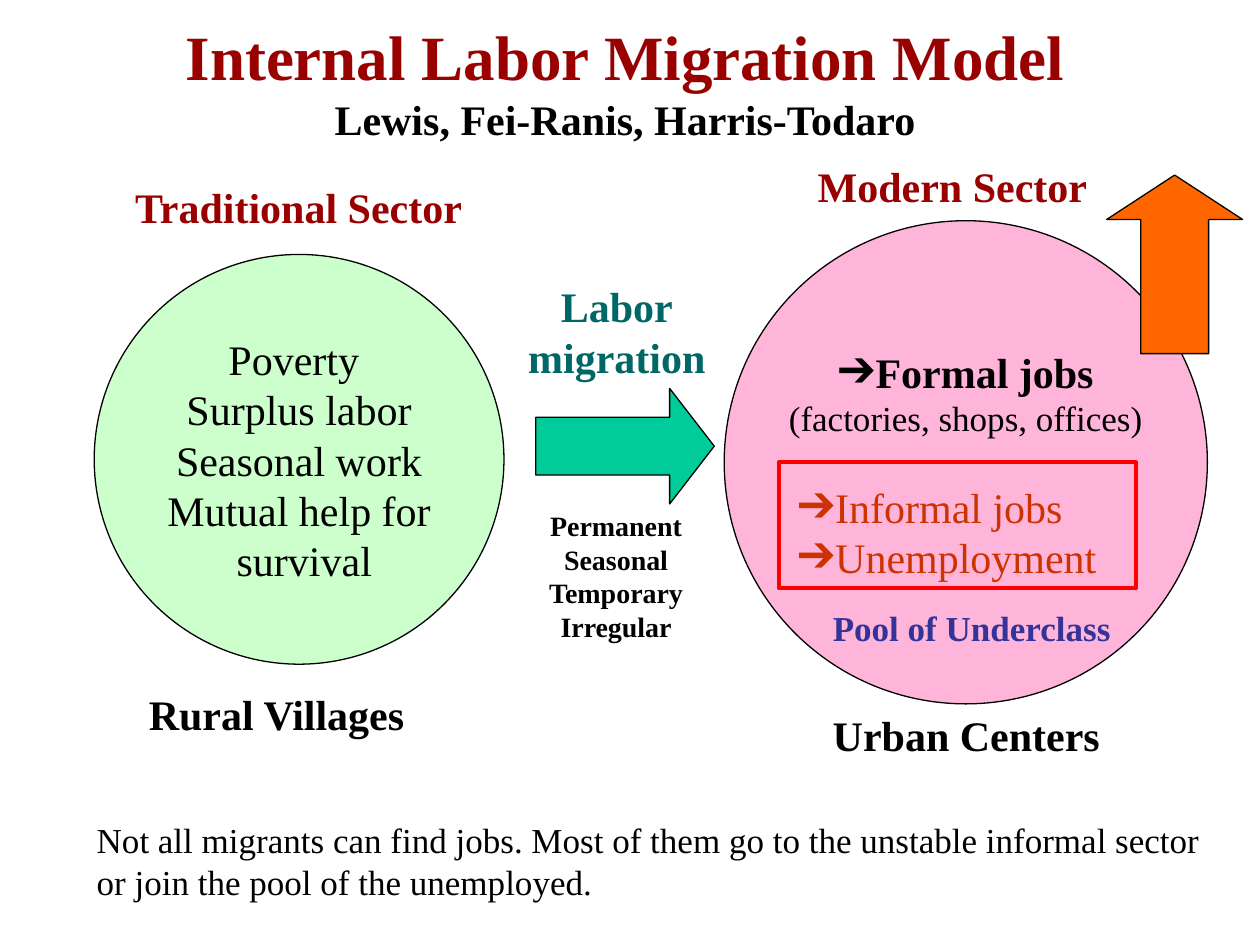
"""Build the internal labor migration model slide."""
from dataclasses import dataclass

from lxml import etree
from pptx import Presentation
from pptx.dml.color import RGBColor
from pptx.enum import shapes, text
from pptx.oxml import ns
from pptx.util import Cm, Pt


@dataclass(frozen=True)
class Theme:
    font: str = "Times New Roman"
    black: str = "000000"
    dark_red: str = "990000"
    teal: str = "006666"
    rust: str = "CC3300"
    indigo: str = "333399"
    red: str = "FF0000"
    light_green: str = "CCFFCC"
    pink: str = "FFB5DA"
    green: str = "00CC99"
    orange: str = "FF6600"
    title: int = 36
    heading: int = 24
    body: int = 20
    small: int = 16


THEME = Theme()
SHAPE = shapes.MSO_SHAPE
ALIGN = text.PP_ALIGN


@dataclass(frozen=True)
class Box:
    left: float
    top: float
    width: float
    height: float

    def lengths(self) -> tuple:
        return Cm(self.left), Cm(self.top), Cm(self.width), Cm(self.height)


@dataclass(frozen=True)
class Label:
    wording: str
    box: Box
    size: int = THEME.heading
    color: str = THEME.black
    bold: bool = True
    align: ALIGN = ALIGN.CENTER


@dataclass(frozen=True)
class Figure:
    kind: SHAPE
    box: Box
    fill: str | None
    line: str = THEME.black
    weight: float = 0.75
    head: float | None = None


VILLAGES = Figure(SHAPE.OVAL, Box(1.9, 5.13, 8.26, 8.26), THEME.light_green)
CITIES = Figure(SHAPE.OVAL, Box(14.6, 4.45, 9.74, 9.74), THEME.pink)
MIGRATION = Figure(SHAPE.RIGHT_ARROW, Box(10.8, 7.83, 3.6, 2.33), THEME.green, head=0.386)
GROWTH = Figure(SHAPE.UP_ARROW, Box(22.31, 3.53, 2.74, 3.6), THEME.orange, head=0.327)
UNDERCLASS = Figure(SHAPE.RECTANGLE, Box(15.7, 9.32, 7.2, 2.54), None, THEME.red, 2.25)

LABELS = (
    Label("Rural Villages", Box(2.75, 13.76, 5.93, 1.27), align=ALIGN.LEFT),
    Label("Urban Centers", Box(15.88, 14.18, 7.2, 1.27)),
    Label("Labor\nmigration", Box(10.32, 5.54, 4.23, 2.28), color=THEME.teal),
    Label("Not all migrants can find jobs. Most of them go to the unstable informal "
          "sector or join the pool of the unemployed.",
          Box(1.7, 16.38, 23.07, 1.96), THEME.body, bold=False, align=ALIGN.LEFT),
    Label("Pool of Underclass", Box(16.1, 12.11, 6.98, 1.09), THEME.body, THEME.indigo),
    Label("Traditional Sector", Box(2.12, 3.53, 7.8, 1.27), color=THEME.dark_red),
    Label("Modern Sector", Box(15.3, 3.12, 7.8, 1.27), color=THEME.dark_red),
    Label("Permanent\nSeasonal\nTemporary\nIrregular", Box(10.32, 10.13, 4.2, 2.97), THEME.small),
)


def write(paragraph, wording: str, *, size: int = THEME.heading, color: str = THEME.black,
          bold: bool = False, align: ALIGN = ALIGN.CENTER, bullet: str = "") -> None:
    """Append formatted lines to a paragraph."""
    paragraph.alignment = align
    for number, line in enumerate(wording.split("\n")):
        if number:
            paragraph.add_line_break()
        run = paragraph.add_run()
        run.text = line
        run.font.name = THEME.font
        run.font.size = Pt(size)
        run.font.bold = bold
        run.font.color.rgb = RGBColor.from_string(color)
    if bullet:
        properties = paragraph._p.get_or_add_pPr()
        properties.set("marL", "0")
        properties.set("indent", "0")
        etree.SubElement(properties, ns.qn("a:buFont")).set("typeface", THEME.font)
        etree.SubElement(properties, ns.qn("a:buChar")).set("char", bullet)


def add_figure(slide, figure: Figure):
    """Draw a preset shape and return its text frame."""
    shape = slide.shapes.add_shape(figure.kind, *figure.box.lengths())
    shape.shadow.inherit = False
    if figure.fill:
        shape.fill.solid()
        shape.fill.fore_color.rgb = RGBColor.from_string(figure.fill)
    else:
        shape.fill.background()
    shape.line.color.rgb = RGBColor.from_string(figure.line)
    shape.line.width = Pt(figure.weight)
    if figure.head is not None:
        shape.adjustments[1] = figure.head
    frame = shape.text_frame
    frame.word_wrap = False
    frame.vertical_anchor = text.MSO_ANCHOR.MIDDLE
    return frame


def add_label(slide, label: Label) -> None:
    """Place a wrapped text box."""
    frame = slide.shapes.add_textbox(*label.box.lengths()).text_frame
    frame.word_wrap = True
    write(frame.paragraphs[0], label.wording, size=label.size, color=label.color,
          bold=label.bold, align=label.align)


def add_title(slide) -> None:
    """Fill the title placeholder with the heading and its authors."""
    title = slide.shapes.title
    title.left, title.top, title.width, title.height = Box(1.7, 0.33, 21.8, 2.6).lengths()
    frame = title.text_frame
    frame.auto_size = text.MSO_AUTO_SIZE.NONE
    frame.vertical_anchor = text.MSO_ANCHOR.MIDDLE
    paragraph = frame.paragraphs[0]
    write(paragraph, "Internal Labor Migration Model", size=THEME.title,
          color=THEME.dark_red, bold=True)
    paragraph.add_line_break()
    write(paragraph, "Lewis, Fei-Ranis, Harris-Todaro", bold=True)


def add_sectors(slide) -> None:
    """Draw both sectors, the arrows and the underclass frame."""
    villages = add_figure(slide, VILLAGES)
    write(villages.paragraphs[0], "Poverty ")
    for wording in ("Surplus labor", "Seasonal work\nMutual help for\n survival"):
        write(villages.add_paragraph(), wording)

    cities = add_figure(slide, CITIES)
    cities.margin_top, cities.margin_bottom = Cm(0), Cm(2.82)
    formal = cities.paragraphs[0]
    write(formal, "Formal jobs", bold=True, bullet="➔")
    formal.add_line_break()
    write(formal, "(factories, shops, offices)", size=THEME.body)

    add_figure(slide, MIGRATION)
    add_figure(slide, GROWTH)

    underclass = add_figure(slide, UNDERCLASS)
    underclass.word_wrap = True
    underclass.margin_left, underclass.margin_top = Cm(0.38), Cm(0.25)
    underclass.margin_bottom = Cm(0)
    for paragraph, wording in ((underclass.paragraphs[0], "Informal jobs"),
                               (underclass.add_paragraph(), "Unemployment")):
        write(paragraph, wording, color=THEME.rust, align=ALIGN.LEFT, bullet="➔")


def main() -> None:
    """Build and save the slide."""
    presentation = Presentation()
    presentation.slide_width, presentation.slide_height = Cm(25.4), Cm(19.05)
    slide = presentation.slides.add_slide(presentation.slide_layouts.get_by_name("Title Only"))
    add_title(slide)
    add_sectors(slide)
    for label in LABELS:
        add_label(slide, label)
    presentation.save("out.pptx")


if __name__ == "__main__":
    main()
